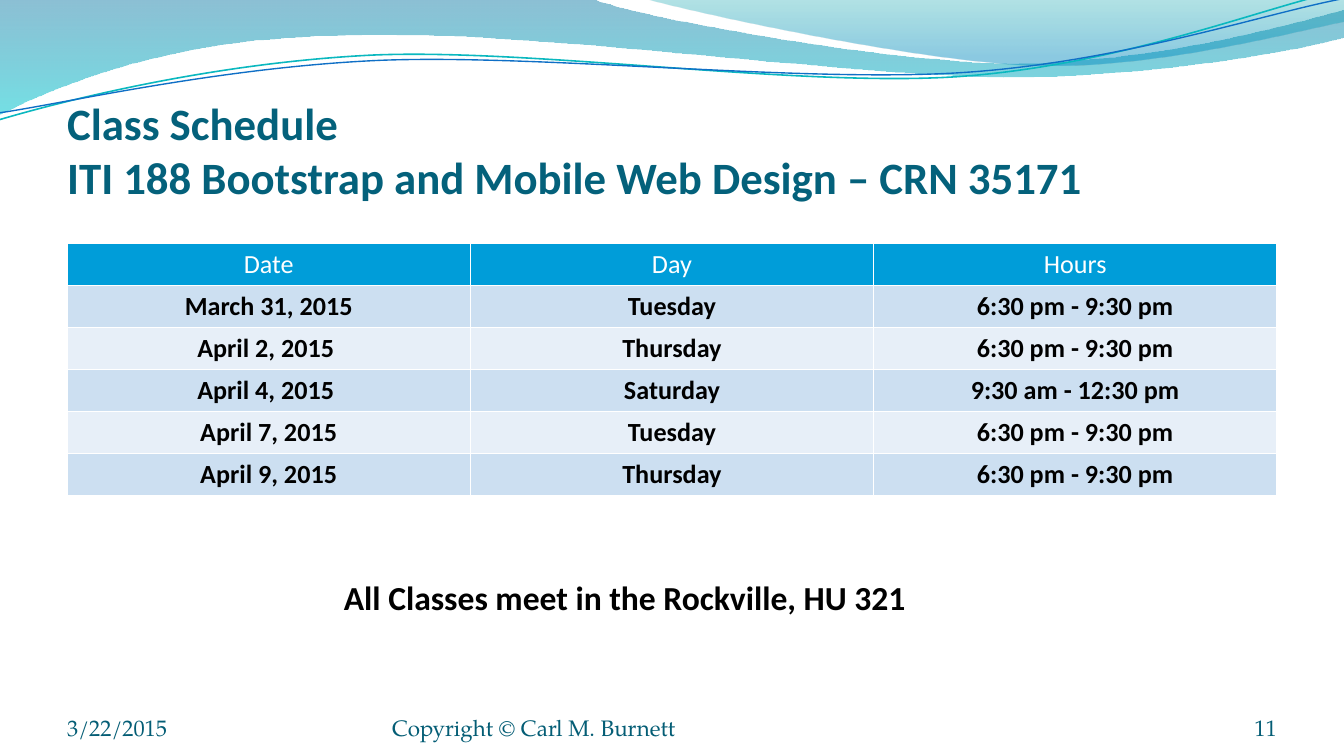
"""Build the class schedule slide with its wave header."""
import math

from lxml import etree
from pptx import Presentation
from pptx import util as u
from pptx.dml.color import RGBColor
from pptx.enum import text
from pptx.oxml.ns import qn

WHITE = RGBColor(0xFF, 0xFF, 0xFF)
BLACK = RGBColor(0x00, 0x00, 0x00)
TITLE_BLUE = RGBColor(0x04, 0x61, 0x7B)
FOOTER_BLUE = RGBColor(0x04, 0x5D, 0x75)
HEADER_BLUE = RGBColor(0x00, 0x9D, 0xD9)
BAND_DARK = RGBColor(0xCC, 0xDF, 0xF1)
BAND_LIGHT = RGBColor(0xE7, 0xEF, 0xF8)
WAVE_BLUE = RGBColor(0x00, 0x74, 0xA1)
WAVE_CYAN = RGBColor(0x00, 0xC6, 0xCF)
CREST_TEAL = RGBColor(0x00, 0xA1, 0xA9)
CREST_BLUE = RGBColor(0x00, 0x8B, 0xBF)
LINE_TEAL = RGBColor(0x0A, 0xB8, 0xBF)
LINE_BLUE = RGBColor(0x0F, 0x6F, 0xC6)

BODY_FONT = "Calibri"
FOOTER_FONT = "TeX Gyre Pagella"
TILT = 2.7

WAVE = [
    [(0, 0)], [(11.18, -0.03)],
    [(12.09, 0.33), (16.87, 1.19), (19.25, 1.19)],
    [(21.67, 1.19), (24.33, 0.48), (25.4, 0.18)],
    [(25.43, 0.69)],
    [(24.97, 0.84), (22.1, 1.45), (18.95, 1.45)],
    [(15.8, 1.42), (9.7, 0.53), (6.53, 0.66)],
    [(3.28, 0.69), (1.17, 1.57), (-0.03, 2.16)],
]
CREST = [
    [(12.17, -0.03)],
    [(12.93, 0.2), (17.32, 1.17), (19.53, 1.24)],
    [(21.74, 1.32), (24.41, 0.61), (25.4, 0.41)],
    [(25.4, 0)],
]
TEAL_CURVE = [
    [(0, 2.26)],
    [(1.22, 1.9), (4.01, 1.19), (7.04, 1.04)],
    [(10.06, 0.91), (15.04, 1.65), (18.08, 1.45)],
    [(21.16, 1.24), (23.85, 0.15), (25.35, -0.18)],
]
BLUE_CURVE = [
    [(0, 2.13)],
    [(1.19, 1.96), (4.17, 1.27), (7.19, 1.14)],
    [(10.24, 1.02), (15.16, 1.57), (18.21, 1.37)],
    [(21.23, 1.17), (23.9, 0.25), (25.4, -0.03)],
]

EVENING = "6:30 pm - 9:30 pm"
SCHEDULE = [
    ("Date", "Day", "Hours"),
    ("March 31, 2015", "Tuesday", EVENING),
    ("April 2, 2015 ", "Thursday", EVENING),
    ("April 4, 2015 ", "Saturday", "9:30 am - 12:30 pm"),
    ("April 7, 2015", "Tuesday", EVENING),
    ("April 9, 2015", "Thursday", EVENING),
]


def turn(points, degrees, center):
    """Rotate points clockwise about a center."""
    cos, sin = math.cos(math.radians(degrees)), math.sin(math.radians(degrees))
    cx, cy = center
    return [(cx + (x - cx) * cos - (y - cy) * sin,
             cy + (x - cx) * sin + (y - cy) * cos) for x, y in points]


def add_outline(slide, segments, close):
    """Add a freeform whose three-point segments are cubic curves."""
    corners = [(u.Cm(x), u.Cm(y)) for segment in segments for x, y in segment]
    builder = slide.shapes.build_freeform(*corners[0])
    builder.add_line_segments(corners[1:], close=close)
    shape = builder.convert_to_shape()
    shape.shadow.inherit = False
    steps = iter(list(shape.element.spPr.iter(qn("a:lnTo"))))
    for segment in segments[1:]:
        first, *others = [next(steps) for _ in segment]
        if others:
            first.tag = qn("a:cubicBezTo")
        for step in others:
            first.append(step[0])
            step.getparent().remove(step)
    return shape


def add_wave(slide, segments, stops):
    """Add a filled wave with a translucent downward gradient."""
    shape = add_outline(slide, segments, True)
    shape.line.fill.background()
    shape.fill.gradient()
    shape.fill.gradient_angle = 270
    for stop, (position, color, _) in zip(shape.fill.gradient_stops, stops):
        stop.position = position
        stop.color.rgb = color
    colors = shape.element.spPr.iter(qn("a:srgbClr"))
    for element, (_, _, opacity) in zip(colors, stops):
        etree.SubElement(element, qn("a:alpha"), val=str(opacity * 1000))


def add_curve(slide, segments, center, color, width):
    """Add a thin open curve in a tilted frame."""
    level = [turn(segment, TILT, center) for segment in segments]
    shape = add_outline(slide, level, False)
    shape.rotation = 360 - TILT
    shape.fill.background()
    shape.line.color.rgb = color
    shape.line.width = u.Pt(width)


def write(frame, content, *, size, color, font=BODY_FONT, bold=False,
          align=text.PP_ALIGN.LEFT):
    """Write one formatted paragraph, breaking at newlines."""
    para = frame.paragraphs[0]
    para.alignment = align
    for index, line in enumerate(content.split("\n")):
        if index:
            para.add_line_break()
        span = para.add_run()
        span.text = line
        span.font.name = font
        span.font.size = u.Pt(size)
        span.font.bold = bold
        span.font.color.rgb = color


def add_label(slide, content, place, top_inset=0, **style):
    """Add a bottom-anchored text box without side insets."""
    box = slide.shapes.add_textbox(*map(u.Cm, place))
    frame = box.text_frame
    frame.word_wrap = True
    frame.vertical_anchor = text.MSO_ANCHOR.BOTTOM
    frame.margin_left = frame.margin_right = frame.margin_bottom = 0
    frame.margin_top = u.Cm(top_inset)
    write(frame, content, **style)


def add_note(slide, content, place, **style):
    """Add a text box that grows with its single line."""
    frame = slide.shapes.add_textbox(*map(u.Cm, place)).text_frame
    frame.word_wrap = False
    frame.auto_size = text.MSO_AUTO_SIZE.SHAPE_TO_FIT_TEXT
    write(frame, content, **style)


def fill_cell(cell, color):
    """Give a cell its fill and thin white borders."""
    properties = cell._tc.get_or_add_tcPr()
    for side in ("a:lnL", "a:lnR", "a:lnT", "a:lnB"):
        line = etree.SubElement(properties, qn(side), w=str(u.Pt(1)))
        solid = etree.SubElement(line, qn("a:solidFill"))
        etree.SubElement(solid, qn("a:srgbClr"), val=str(WHITE))
    cell.fill.solid()
    cell.fill.fore_color.rgb = color


def add_schedule(slide, rows, place):
    """Add the banded schedule table."""
    table = slide.shapes.add_table(len(rows), len(rows[0]), *map(u.Cm, place)).table
    for r, row in enumerate(rows):
        table.rows[r].height = u.Cm(place[3] / len(rows))
        band = HEADER_BLUE if r == 0 else BAND_DARK if r % 2 else BAND_LIGHT
        for c, content in enumerate(row):
            cell = table.cell(r, c)
            fill_cell(cell, band)
            cell.margin_left = cell.margin_right = u.Cm(0.23)
            cell.margin_top = cell.margin_bottom = u.Cm(0.1)
            write(cell.text_frame, content, size=14, bold=r > 0,
                  color=BLACK if r else WHITE, align=text.PP_ALIGN.CENTER)


def main():
    """Build and save the deck."""
    deck = Presentation()
    deck.slide_width, deck.slide_height = u.Cm(25.4), u.Cm(14.29)
    slide = deck.slides.add_slide(deck.slide_layouts[6])
    add_wave(slide, WAVE, [(0, WAVE_BLUE, 45), (1, WAVE_CYAN, 55)])
    add_wave(slide, CREST, [(0, CREST_TEAL, 30), (0.8, CREST_BLUE, 45)])
    add_curve(slide, TEAL_CURVE, (12.67, 1.1), LINE_TEAL, 0.85)
    add_curve(slide, BLUE_CURVE, (12.69, 1.13), LINE_BLUE, 0.75)
    add_label(slide, "Class Schedule\nITI 188 Bootstrap and Mobile Web Design – CRN 35171",
              (1.27, 1.46, 22.86, 2.38), 0.13, size=24, color=TITLE_BLUE, bold=True)
    add_schedule(slide, SCHEDULE, (1.27, 4.6, 22.86, 4.7))
    footer = {"size": 12, "color": FOOTER_BLUE, "font": FOOTER_FONT}
    add_label(slide, "3/22/2015", (1.27, 13.24, 5.92, 0.76), **footer)
    add_label(slide, "Copyright © Carl M. Burnett", (7.41, 13.24, 9.31, 0.76), **footer)
    add_label(slide, "11", (22.01, 13.24, 2.12, 0.76),
              align=text.PP_ALIGN.RIGHT, **footer)
    add_note(slide, "All Classes meet in the Rockville, HU 321",
             (6.25, 10.78, 11.23, 1.03), size=18, color=BLACK, bold=True)
    deck.save("out.pptx")


if __name__ == "__main__":
    main()
